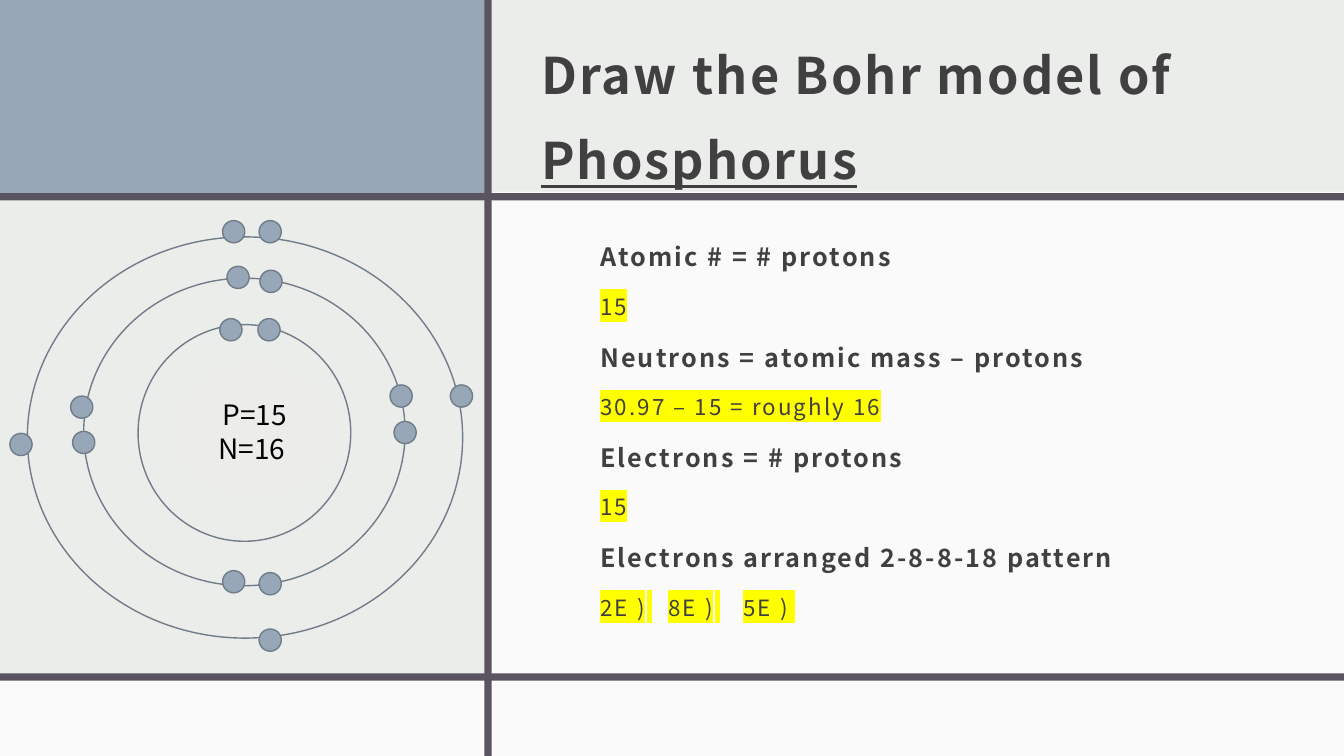
from dataclasses import dataclass

from lxml.etree import SubElement
from pptx import Presentation
from pptx.dml.color import RGBColor as Color
from pptx.enum.shapes import MSO_SHAPE as Shape
from pptx.enum.text import MSO_ANCHOR as Anchor, PP_ALIGN as Align
from pptx.oxml.ns import qn
from pptx.util import Cm, Pt


@dataclass(frozen=True)
class Theme:
    font: str = "Noto Sans CJK JP"
    background: str = "EBEDEB"
    panel: str = "FFFFFF"
    accent: str = "97A7B8"
    rule: str = "595460"
    outline: str = "707C88"
    nucleus: str = "ECEDEB"
    text: str = "404040"
    black: str = "000000"
    marker: str = "FFFF00"
    title_size: int = 36
    nucleus_size: int = 20
    question_size: int = 18
    answer_size: int = 16


class SlideBuilder:
    def __init__(self, slide, theme):
        self.slide = slide
        self.theme = theme
        slide.background.fill.solid()
        slide.background.fill.fore_color.rgb = Color.from_string(theme.background)

    def shape(self, kind, box, fill=None, line=None, opacity=None):
        shape = self.slide.shapes.add_shape(kind, *map(Cm, box))
        shape.shadow.inherit = False
        if fill:
            shape.fill.solid()
            shape.fill.fore_color.rgb = Color.from_string(fill)
        else:
            shape.fill.background()
        if opacity:
            color = shape.fill._xPr.find(".//" + qn("a:srgbClr"))
            SubElement(color, qn("a:alpha"), val=str(opacity * 1000))
        if line:
            shape.line.color.rgb = Color.from_string(line)
            shape.line.width = Pt(1)
        else:
            shape.line.fill.background()
        return shape

    def panel(self, box, fill, opacity=None):
        return self.shape(Shape.RECTANGLE, box, fill, opacity=opacity)

    def circle(self, box, fill=None, line=None):
        return self.shape(Shape.OVAL, box, fill, line)

    def text_box(self, box, anchor=Anchor.TOP):
        frame = self.slide.shapes.add_textbox(*map(Cm, box)).text_frame
        frame.word_wrap = True
        frame.vertical_anchor = anchor
        return frame

    def add_run(self, paragraph, text, size, color, bold=False, spacing=0, highlight=None):
        run = paragraph.add_run()
        run.text = text
        font = run.font
        font.size = Pt(size)
        font.bold = bold
        font.color.rgb = Color.from_string(color)
        properties = run._r.get_or_add_rPr()
        if spacing:
            properties.set("spc", str(spacing))
        if highlight:
            marker = SubElement(properties, qn("a:highlight"))
            SubElement(marker, qn("a:srgbClr"), val=highlight)
        font.name = self.theme.font
        return run


WIDTH, HEIGHT = 33.87, 19.05
RULE = 0.18
LETTER_SPACING = 150
ELECTRON = 0.56

SHELLS = [(3.48, 8.18, 5.36, 5.46), (2.11, 7.01, 8.1, 7.75), (0.69, 5.97, 10.97, 10.11)]
ELECTRONS = [
    # First shell
    (5.54, 8.03), (6.5, 8.03),
    # Second shell
    (5.72, 6.71), (6.55, 6.81), (9.83, 9.7), (9.93, 10.62),
    (6.53, 14.43), (5.61, 14.38), (1.83, 10.87), (1.78, 9.98),
    # Third shell
    (5.61, 5.56), (6.53, 5.56), (11.35, 9.7), (6.53, 15.85), (0.25, 10.92),
]
# Each answer is a list of (text, letter spacing); wide spacing makes a gap
QUESTIONS = [
    ("Atomic # = # protons", [("15", LETTER_SPACING)]),
    ("Neutrons = atomic mass – protons", [("30.97 – 15 = roughly 16", LETTER_SPACING)]),
    ("Electrons = # protons", [("15", LETTER_SPACING)]),
    ("Electrons arranged 2-8-8-18 pattern", [
        ("2E )", LETTER_SPACING), (" ", 1170),
        ("8E )", LETTER_SPACING), (" ", 1680),
        ("5E ) ", LETTER_SPACING),
    ]),
]


def main():
    theme = Theme()
    presentation = Presentation()
    presentation.slide_width, presentation.slide_height = Cm(WIDTH), Cm(HEIGHT)
    slide = presentation.slides.add_slide(presentation.slide_layouts[6])
    builder = SlideBuilder(slide, theme)

    # Panels and dividing rules
    builder.panel((0, 0, 12.29, 5), theme.accent)
    builder.panel((12.29, 4.83, 21.58, 12.29), theme.panel, opacity=75)
    builder.panel((0, 17.12, WIDTH, 1.93), theme.panel, opacity=75)
    for top in (4.87, 16.97):
        builder.panel((0, top, WIDTH, RULE), theme.rule)
    builder.panel((12.21, 0, RULE, HEIGHT), theme.rule)

    # Title
    title = builder.text_box((13.39, 0.41, 20.14, 4.45), Anchor.MIDDLE).paragraphs[0]
    title.line_spacing = 1.4
    for words in ("Draw the Bohr model of ", "Phosphorus"):
        run = builder.add_run(title, words, theme.title_size, theme.text, True,
                              LETTER_SPACING)
    run.font.underline = True

    # Nucleus
    nucleus = builder.circle((4.47, 9.17, 3.91, 3.4), theme.nucleus).text_frame
    nucleus.vertical_anchor = Anchor.MIDDLE
    for index, count in enumerate(("P=15", "N=16 ")):
        paragraph = nucleus.add_paragraph() if index else nucleus.paragraphs[0]
        paragraph.alignment = Align.CENTER
        builder.add_run(paragraph, count, theme.nucleus_size, theme.black)

    # Shells and electrons
    for shell in SHELLS:
        builder.circle(shell, line=theme.outline)
    for left, top in ELECTRONS:
        builder.circle((left, top, ELECTRON, ELECTRON), theme.accent, theme.outline)

    # Questions and highlighted answers
    notes = builder.text_box((14.88, 5.74, 16.26, 10.46))
    for index, (question, answer) in enumerate(QUESTIONS):
        heading = notes.add_paragraph() if index else notes.paragraphs[0]
        builder.add_run(heading, question, theme.question_size, theme.text, True,
                        LETTER_SPACING)
        reply = notes.add_paragraph()
        for words, spacing in answer:
            builder.add_run(reply, words, theme.answer_size, theme.text, False,
                            spacing, theme.marker)
    for index, paragraph in enumerate(notes.paragraphs):
        paragraph.line_spacing = 1.3
        if index:
            paragraph.space_before = Pt(9.3)

    presentation.save("out.pptx")


if __name__ == "__main__":
    main()
